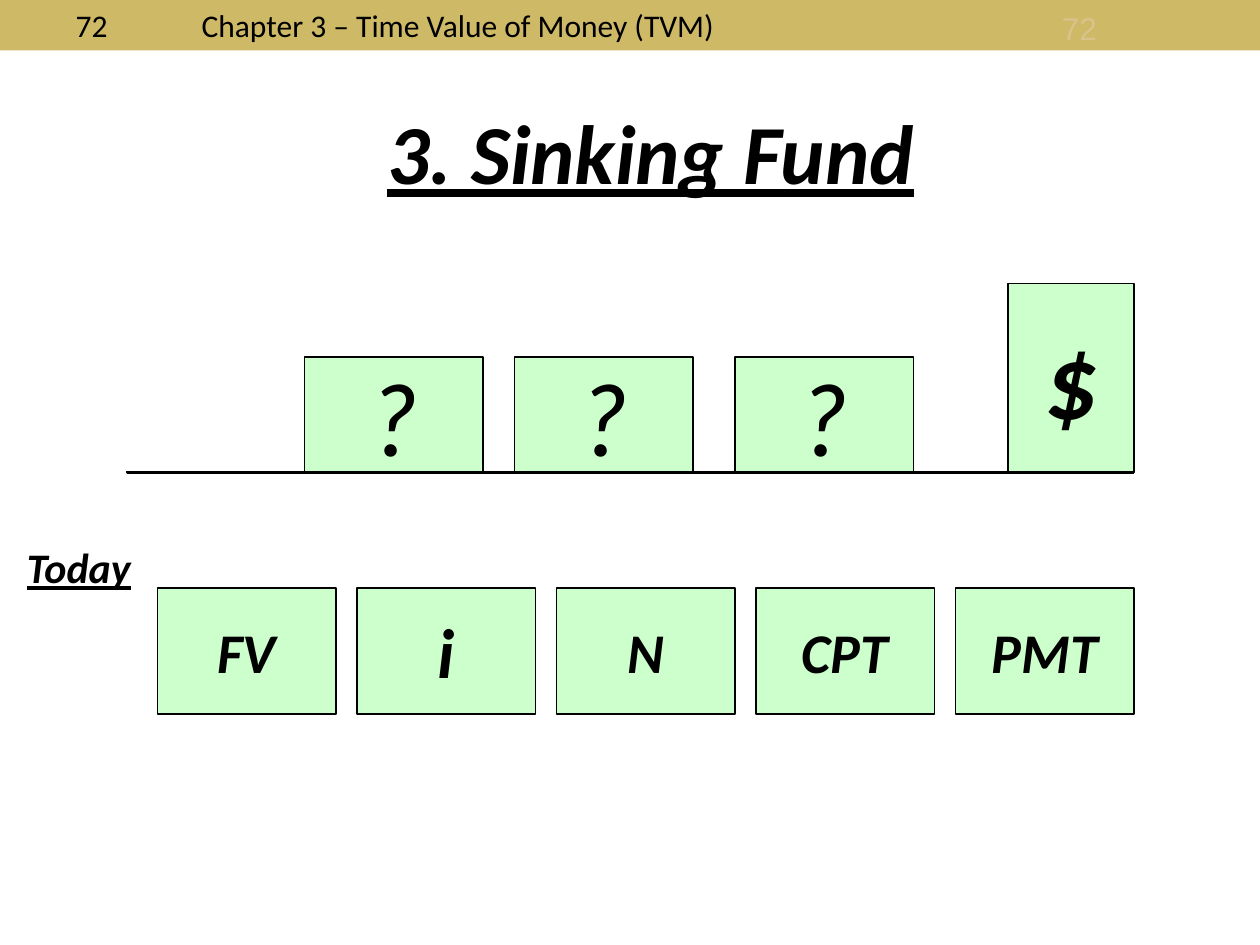
from dataclasses import dataclass

from lxml import etree
from pptx import Presentation
from pptx.dml.color import RGBColor
from pptx.enum.shapes import MSO_CONNECTOR, MSO_SHAPE
from pptx.enum.text import MSO_ANCHOR, MSO_AUTO_SIZE, PP_ALIGN
from pptx.oxml.ns import qn
from pptx.util import Inches, Pt

RECTANGLE = MSO_SHAPE.RECTANGLE
PROCESS = MSO_SHAPE.FLOWCHART_PROCESS
STRAIGHT = MSO_CONNECTOR.STRAIGHT
TOP, MIDDLE = MSO_ANCHOR.TOP, MSO_ANCHOR.MIDDLE
LEFT, CENTER = PP_ALIGN.LEFT, PP_ALIGN.CENTER
FIXED_SIZE = MSO_AUTO_SIZE.NONE
TITLE_ONLY = 5


@dataclass(frozen=True)
class Theme:
    font: str = "Calibri"
    number_font: str = "Arial"
    ink: str = "000000"
    paper: str = "FFFFFF"
    band: str = "CEB966"
    faint: str = "D9C38C"
    cash: str = "CCFFCC"
    header_size: int = 18
    label_size: int = 24
    key_size: int = 32
    rate_size: int = 40
    title_size: int = 48
    cash_size: int = 60
    outline: float = 0.75
    rule: float = 2.25


def write_text(shape, text, *, size, font, color, bold=False, italic=False,
               underline=False, align=CENTER, anchor=TOP, wrap=True, tab=None):
    frame = shape.text_frame
    frame.auto_size = FIXED_SIZE
    frame.word_wrap = wrap
    frame.vertical_anchor = anchor
    para = frame.paragraphs[0]
    para.alignment = align
    if tab is not None:
        properties = para._p.get_or_add_pPr()
        stops = etree.SubElement(properties, qn("a:tabLst"))
        etree.SubElement(stops, qn("a:tab"), pos=str(Inches(tab)), algn="l")
    span = para.add_run()
    span.text = text
    span.font.name = font
    span.font.size = Pt(size)
    span.font.bold = bold
    span.font.italic = italic
    span.font.underline = underline
    span.font.color.rgb = RGBColor.from_string(color)


class SlideBuilder:
    def __init__(self, page, theme):
        self.page = page
        self.theme = theme

    def title(self, text, left, top, width, height):
        box = self.page.shapes.title
        box.left, box.top = Inches(left), Inches(top)
        box.width, box.height = Inches(width), Inches(height)
        write_text(box, text, size=self.theme.title_size, font=self.theme.font,
                   color=self.theme.ink, bold=True, italic=True, underline=True)

    def label(self, text, left, top, width, height, inset=0.1, **style):
        box = self.page.shapes.add_textbox(
            Inches(left), Inches(top), Inches(width), Inches(height))
        box.text_frame.margin_left = Inches(inset)
        write_text(box, text, **{"font": self.theme.font, "color": self.theme.ink, **style})

    def block(self, kind, left, top, width, height, fill, outlined=True):
        shape = self.page.shapes.add_shape(
            kind, Inches(left), Inches(top), Inches(width), Inches(height))
        shape.shadow.inherit = False
        shape.fill.solid()
        shape.fill.fore_color.rgb = RGBColor.from_string(fill)
        if outlined:
            shape.line.color.rgb = RGBColor.from_string(self.theme.ink)
            shape.line.width = Pt(self.theme.outline)
        else:
            shape.line.fill.background()
        return shape

    def card(self, kind, text, left, top, width, height, size, bold=True):
        shape = self.block(kind, left, top, width, height, self.theme.cash)
        write_text(shape, text, size=size, font=self.theme.font, color=self.theme.ink,
                   bold=bold, italic=True, anchor=MIDDLE, wrap=False)

    def line(self, start, end, color, arrow=False):
        connector = self.page.shapes.add_connector(
            STRAIGHT, *(Inches(value) for value in (*start, *end)))
        connector.line.color.rgb = RGBColor.from_string(color)
        connector.line.width = Pt(self.theme.rule)
        properties = connector.element.spPr
        if arrow:
            outline = properties.find(qn("a:ln"))
            etree.SubElement(outline, qn("a:tailEnd"), type="arrow")
        etree.SubElement(properties, qn("a:effectLst"))


def main():
    theme = Theme()
    deck = Presentation()
    deck.slide_width, deck.slide_height = Inches(10), Inches(7.5)
    page = deck.slides.add_slide(deck.slide_layouts[TITLE_ONLY])
    builder = SlideBuilder(page, theme)

    builder.block(RECTANGLE, 0, 0, 10, 0.4, theme.band, outlined=False)
    builder.label("72\tChapter 3 – Time Value of Money (TVM)", 0, 0, 6.42, 0.4,
                  inset=0.6, size=theme.header_size, align=LEFT, tab=1)
    builder.label("72", 8.33, 0.02, 0.6, 0.4, size=theme.header_size,
                  font=theme.number_font, color=theme.faint, align=LEFT)
    builder.title("3. Sinking Fund", 2.33, 0.75, 5.67, 0.91)

    card_width, timeline = 17 / 12, 3.75
    payment_height, goal_height = 11 / 12, 1.5
    for left in (29 / 12, 49 / 12, 70 / 12):
        builder.card(PROCESS, "?", left, timeline - payment_height, card_width,
                     payment_height, theme.cash_size, bold=False)
    builder.card(PROCESS, "$", 8, timeline - goal_height, 1, goal_height, theme.cash_size)
    builder.line((1, timeline), (9, timeline), theme.ink)

    first_key, key_step, key_top = 1.25, 19 / 12, 14 / 3
    for index, key in enumerate(("FV", "i", "N", "CPT", "PMT")):
        size = theme.rate_size if key == "i" else theme.key_size
        builder.card(RECTANGLE, key, first_key + index * key_step, key_top, card_width, 1, size)

    builder.label("Today", 0, 4.25, 1.25, 0.51, size=theme.label_size,
                  bold=True, italic=True, underline=True)
    builder.line((1, 4.33), (1, timeline), theme.paper, arrow=True)

    deck.save("out.pptx")


if __name__ == "__main__":
    main()
